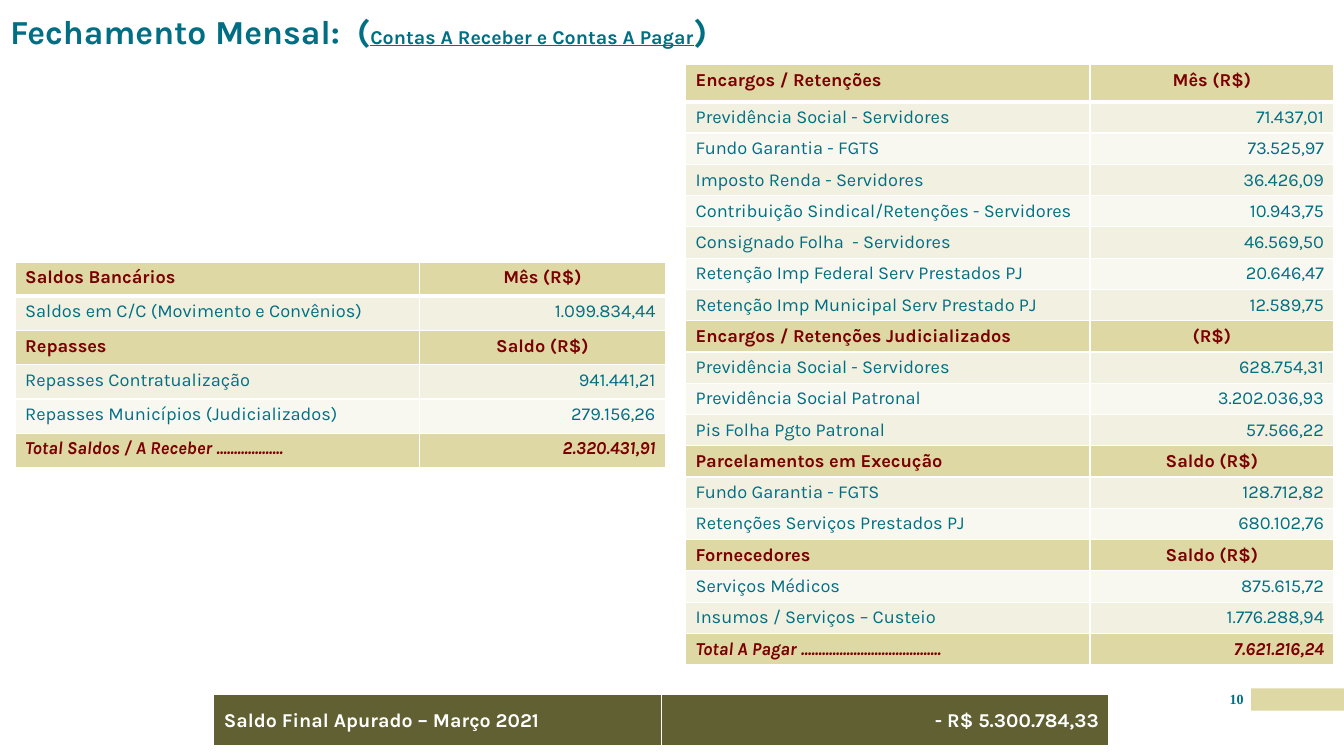
from lxml import etree
from pptx import Presentation
from pptx.dml.color import RGBColor
from pptx.enum.shapes import MSO_SHAPE as Shape
from pptx.enum.text import MSO_ANCHOR as Anchor, MSO_AUTO_SIZE as AutoSize, PP_ALIGN as Align
from pptx.oxml.ns import qn
from pptx.util import Inches, Pt

TEAL, MAROON, WHITE = "006F83", "7A0000", "FFFFFF"
SAND, OLIVE = "DED8A4", "606032"
BANDS = ["F9F8F0", "F2F0E0"]

PAYABLES = [
    ("Encargos / Retenções", "Mês (R$)"),
    ("Previdência Social - Servidores", "71.437,01"),
    ("Fundo Garantia - FGTS", "73.525,97"),
    ("Imposto Renda - Servidores", "36.426,09"),
    ("Contribuição Sindical/Retenções - Servidores", "10.943,75"),
    ("Consignado Folha  - Servidores", "46.569,50"),
    ("Retenção Imp Federal Serv Prestados PJ", "20.646,47"),
    ("Retenção Imp Municipal Serv Prestado PJ", "12.589,75"),
    ("Encargos / Retenções Judicializados", "(R$)"),
    ("Previdência Social - Servidores", "628.754,31"),
    ("Previdência Social Patronal", "3.202.036,93"),
    ("Pis Folha Pgto Patronal", "57.566,22"),
    ("Parcelamentos em Execução", "Saldo (R$)"),
    ("Fundo Garantia - FGTS", "128.712,82"),
    ("Retenções Serviços Prestados PJ", "680.102,76"),
    ("Fornecedores", "Saldo (R$)"),
    ("Serviços Médicos", "875.615,72"),
    ("Insumos / Serviços – Custeio", "1.776.288,94"),
    ("Total A Pagar ........................................", "7.621.216,24"),
]
RECEIVABLES = [
    ("Saldos Bancários", "Mês (R$)"),
    ("Saldos em C/C (Movimento e Convênios)", "1.099.834,44"),
    ("Repasses", "Saldo (R$)"),
    ("Repasses Contratualização", "941.441,21"),
    ("Repasses Municípios (Judicializados)", "279.156,26"),
    ("Total Saldos / A Receber ...................", "2.320.431,91"),
]


def color(value):
    return RGBColor.from_string(value)


def write(para, text, *, size=13, font="Karla", ink=TEAL, bold=False,
          italic=False, underline=False, align=None):
    span = para.add_run()
    span.text = text
    span.font.size, span.font.name = Pt(size), font
    span.font.bold, span.font.italic, span.font.underline = bold, italic, underline
    span.font.color.rgb = color(ink)
    if align is not None:
        para.alignment = align


def border(cell, bottom):
    """White cell borders; only the bottom width varies."""
    properties = cell._tc.get_or_add_tcPr()
    for side, width in (("L", 1), ("R", 1), ("T", 1), ("B", bottom)):
        line = etree.SubElement(properties, qn(f"a:ln{side}"), w=str(Pt(width)))
        fill = etree.SubElement(line, qn("a:solidFill"))
        etree.SubElement(fill, qn("a:srgbClr"), val=WHITE)


class ClosingSlide:
    def __init__(self, deck):
        self.page = deck.slides.add_slide(deck.slide_layouts[5])

    def frame(self, box, left, top, width, height):
        box.left, box.top = Inches(left), Inches(top)
        box.width, box.height = Inches(width), Inches(height)
        text = box.text_frame
        text.margin_left = text.margin_right = text.margin_top = text.margin_bottom = 0
        text.word_wrap, text.auto_size = True, AutoSize.NONE
        text.vertical_anchor = Anchor.TOP
        return text.paragraphs[0]

    def title(self, *place):
        para = self.frame(self.page.shapes.title, *place)
        para.line_spacing = 0.9
        write(para, "Fechamento Mensal:  (", size=24, bold=True, align=Align.LEFT)
        write(para, "Contas A Receber e Contas A Pagar", size=14, bold=True, underline=True)
        write(para, ")", size=24, bold=True)

    def text(self, text, *place, **style):
        box = self.page.shapes.add_textbox(0, 0, 0, 0)
        write(self.frame(box, *place), text, **style)

    def bar(self, *place):
        bar = self.page.shapes.add_shape(Shape.RECTANGLE, *map(Inches, place))
        bar.shadow.inherit = False
        bar.fill.solid()
        bar.fill.fore_color.rgb = color(SAND)
        bar.line.fill.background()

    def grid(self, left, top, columns, heights):
        table = self.page.shapes.add_table(
            len(heights), len(columns), Inches(left), Inches(top),
            Inches(sum(columns)), Inches(sum(heights))).table
        table.first_row = table.horz_banding = False
        for column, width in zip(table.columns, columns):
            column.width = Inches(width)
        for row, height in zip(table.rows, heights):
            row.height = Inches(height)
        return table

    def cell(self, cell, text, fill, bottom=1, **style):
        border(cell, bottom)
        cell.fill.solid()
        cell.fill.fore_color.rgb = color(fill)
        write(cell.text_frame.paragraphs[0], text, **style)

    def ledger(self, entries, left, top, columns, heights):
        table = self.grid(left, top, columns, heights)
        for index, entry in enumerate(entries):
            heading = entry[1].endswith("(R$)")
            total = entry[0].startswith("Total")
            strong = heading or total
            aligns = (Align.LEFT, Align.CENTER if heading else Align.RIGHT)
            for column, (text, align) in enumerate(zip(entry, aligns)):
                self.cell(table.cell(index, column), text,
                          SAND if strong else BANDS[index % 2],
                          bottom=1 if index else 3, align=align, bold=strong,
                          italic=total, ink=MAROON if strong else TEAL)

    def result(self, entry, left, top, columns, height):
        table = self.grid(left, top, columns, [height])
        for column, (text, align) in enumerate(zip(entry, (Align.LEFT, Align.RIGHT))):
            cell = table.cell(0, column)
            cell.vertical_anchor = Anchor.MIDDLE
            self.cell(cell, text, OLIVE, bottom=3, size=14, bold=True,
                      ink=WHITE, align=align)


def main():
    deck = Presentation()
    deck.slide_width, deck.slide_height = Inches(13.33), Inches(7.5)
    slide = ClosingSlide(deck)

    # Page number and title
    slide.bar(12.41, 6.83, 0.92, 0.22)
    slide.text("10", 12.12, 6.85, 0.29, 0.25, size=10, font="Times New Roman",
               bold=True, align=Align.CENTER)
    slide.title(0.1, 0.15, 13.01, 0.5)

    # Amounts to pay and to receive
    slide.ledger(PAYABLES, 6.8, 0.64, [4.01, 2.42], [0.37] + [0.31] * 18)
    slide.ledger(RECEIVABLES, 0.15, 2.6, [4.01, 2.44], [0.34] * 6)

    # Final balance
    slide.result(("Saldo Final Apurado – Março 2021", "- R$ 5.300.784,33"),
                 2.12, 6.89, [4.44, 4.44], 0.52)

    deck.save("out.pptx")


if __name__ == "__main__":
    main()
